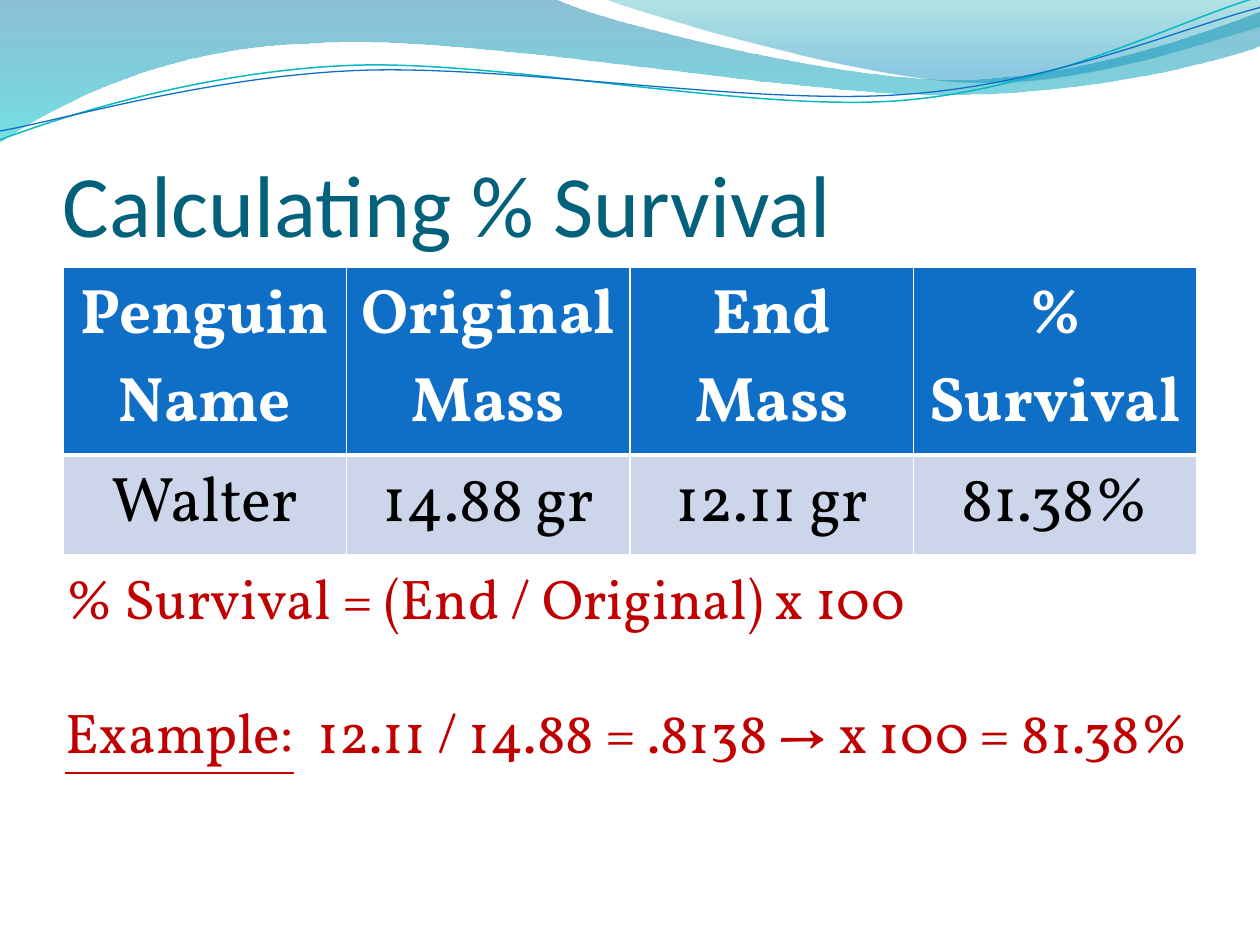
from dataclasses import dataclass
from typing import Optional

from lxml import etree
from pptx import Presentation
from pptx.dml.color import RGBColor
from pptx.enum.text import MSO_ANCHOR, PP_ALIGN
from pptx.oxml.ns import qn
from pptx.util import Inches, Pt

BOTTOM, TOP = MSO_ANCHOR.BOTTOM, MSO_ANCHOR.TOP
CENTER = PP_ALIGN.CENTER
BLUE, WHITE, RED = "0F6FC6", "FFFFFF", "C00000"
BODY_FONT = "Vollkorn"


@dataclass
class Stop:
    """A gradient stop with its opacity in percent."""
    position: float
    color: str
    opacity: int


@dataclass
class Wave:
    """An outline whose two-number segments are lines and six-number ones curves."""
    start: tuple
    segments: list
    stops: Optional[list] = None
    line: str = ""
    width: float = 0


WAVES = [
    Wave((0, 0), [(4.4, -0.01), (4.76, 0.17, 6.64, 0.63, 7.58, 0.63),
                  (8.53, 0.63, 9.58, 0.26, 10, 0.09), (10.01, 0.36),
                  (9.83, 0.44, 8.7, 0.76, 7.46, 0.75),
                  (6.22, 0.75, 3.82, 0.28, 2.57, 0.34),
                  (1.29, 0.36, 0.46, 0.83, -0.01, 1.13)],
         stops=[Stop(0, "0074A1", 45), Stop(1, "00C6CF", 55)]),
    Wave((4.79, -0.01), [(5.09, 0.11, 6.82, 0.62, 7.69, 0.65),
                         (8.56, 0.69, 9.61, 0.32, 10, 0.21), (10, 0)],
         stops=[Stop(0, "00A1A9", 30), Stop(0.8, "008BBF", 45)]),
    Wave((0, 1.11), [(0.48, 0.93, 1.58, 0.57, 2.77, 0.52),
                     (3.95, 0.47, 5.93, 0.89, 7.13, 0.8),
                     (8.33, 0.71, 9.38, 0.15, 9.98, -0.02)],
         line="0AB8BF", width=0.85),
    Wave((0, 1.04), [(0.47, 0.96, 1.64, 0.61, 2.83, 0.56),
                     (4.03, 0.51, 5.97, 0.84, 7.17, 0.75),
                     (8.36, 0.67, 9.41, 0.21, 10, 0.06)],
         line=BLUE, width=0.75),
]
ROWS = [["Penguin Name", "Original Mass", "End Mass", "% Survival"],
        ["Walter", "14.88 gr", "12.11 gr", "81.38%"]]
ROW_HEIGHTS = [1.49, 0.79]


def rgb(value: str) -> RGBColor:
    """Turn a hex string into a colour."""
    return RGBColor.from_string(value)


def bend(sp, segments: list) -> None:
    """Merge the three lines of each six-number segment into one cubic curve."""
    lines = iter(list(sp._element.iter(qn("a:lnTo"))))
    for seg in segments:
        first = next(lines)
        if len(seg) == 6:
            first.tag = qn("a:cubicBezTo")
            for _ in range(2):
                extra = next(lines)
                first.append(extra[0])
                extra.getparent().remove(extra)


def add_wave(s, wave: Wave) -> None:
    """Draw a wave as a gradient area or as an open line."""
    points = [(Inches(x), Inches(y)) for seg in wave.segments
              for x, y in zip(seg[::2], seg[1::2])]
    builder = s.shapes.build_freeform(*map(Inches, wave.start))
    builder.add_line_segments(points, close=bool(wave.stops))
    sp = builder.convert_to_shape()
    bend(sp, wave.segments)
    sp.shadow.inherit = False
    if not wave.stops:
        sp.fill.background()
        sp.line.color.rgb = rgb(wave.line)
        sp.line.width = Pt(wave.width)
        return
    sp.line.fill.background()
    sp.fill.gradient()
    sp.fill.gradient_angle = 270
    for stop, spec in zip(sp.fill.gradient_stops, wave.stops):
        stop.position = spec.position
        stop.color.rgb = rgb(spec.color)
    for color, spec in zip(sp._element.spPr.iter(qn("a:srgbClr")), wave.stops):
        etree.SubElement(color, qn("a:alpha"), val=str(spec.opacity * 1000))


def add_run(p, text: str, size: float, color: str, font: str = BODY_FONT,
            bold: bool = False, underline: bool = False) -> None:
    """Append a formatted run to a paragraph."""
    r = p.add_run()
    r.text = text
    r.font.name, r.font.size = font, Pt(size)
    r.font.bold, r.font.underline = bold, underline
    r.font.color.rgb = rgb(color)


def add_text_frame(s, box: tuple, anchor, insets: tuple):
    """Add a wrapping text box and return its text frame."""
    tf = s.shapes.add_textbox(*map(Inches, box)).text_frame
    tf.word_wrap = True
    tf.vertical_anchor = anchor
    tf.margin_left, tf.margin_top, tf.margin_right, tf.margin_bottom = map(Inches, insets)
    return tf


def set_borders(cell, bottom: float) -> None:
    """Give a cell thin white borders and a bottom border of its own width."""
    tc_pr = cell._tc.get_or_add_tcPr()
    widths = {"a:lnL": 1, "a:lnR": 1, "a:lnT": 1, "a:lnB": bottom}
    for i, (tag, width) in enumerate(widths.items()):
        ln = etree.Element(qn(tag), w=str(Pt(width)))
        fill = etree.SubElement(ln, qn("a:solidFill"))
        etree.SubElement(fill, qn("a:srgbClr"), val=WHITE)
        tc_pr.insert(i, ln)


def add_mass_table(s) -> None:
    """Add the table of penguin masses."""
    table = s.shapes.add_table(len(ROWS), len(ROWS[0]), Inches(0.5), Inches(2.12),
                               Inches(9), Inches(sum(ROW_HEIGHTS))).table
    for i, (row, height) in enumerate(zip(ROWS, ROW_HEIGHTS)):
        header = i == 0
        table.rows[i].height = Inches(height)
        for j, text in enumerate(row):
            cell = table.cell(i, j)
            cell.fill.solid()
            cell.fill.fore_color.rgb = rgb(BLUE if header else "CCD5EA")
            set_borders(cell, 3 if header else 1)
            p = cell.text_frame.paragraphs[0]
            p.alignment = CENTER
            add_run(p, text, 36, WHITE if header else "000000", bold=header)


def main() -> None:
    """Build the slide and save it."""
    prs = Presentation()
    prs.slide_width, prs.slide_height = Inches(10), Inches(7.5)
    s = prs.slides.add_slide(prs.slide_layouts[6])
    for wave in WAVES:
        add_wave(s, wave)

    tf = add_text_frame(s, (0.5, 0.77, 9, 1.25), BOTTOM, (0, 0.05, 0, 0))
    add_run(tf.paragraphs[0], "Calculating % Survival", 50, "04617B", font="Calibri")
    add_mass_table(s)

    tf = add_text_frame(s, (0.42, 4.42, 9.25, 1.72), TOP, (0.1, 0.05, 0.1, 0.05))
    add_run(tf.paragraphs[0], "% Survival = (End / Original) x 100", 32, RED)
    p = tf.add_paragraph()
    p.space_before = Pt(38.5)
    add_run(p, "Example:", 32, RED, underline=True)
    add_run(p, "\t12.11 / 14.88 = .8138 → x 100 = 81.38%", 32, RED)
    prs.save("out.pptx")


if __name__ == "__main__":
    main()
